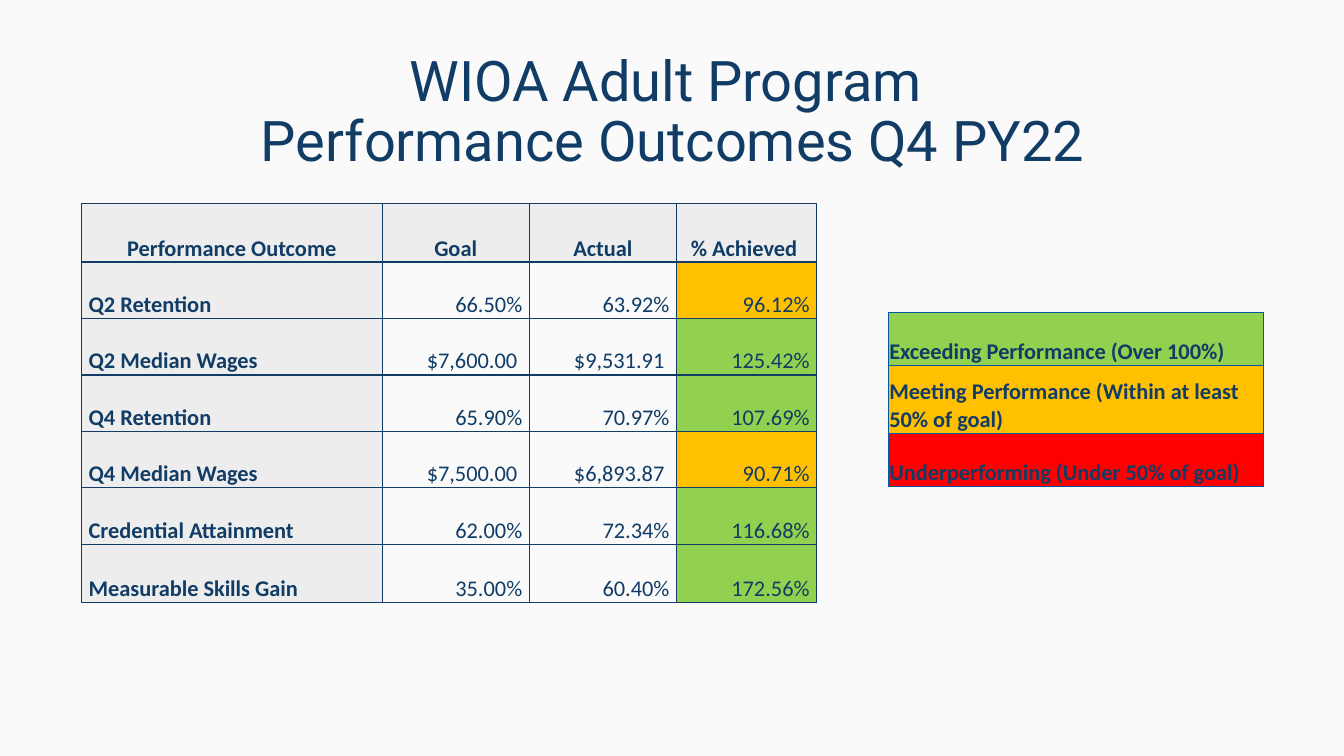
from lxml.etree import SubElement
from pptx import Presentation
from pptx.dml.color import RGBColor
from pptx.enum.text import MSO_ANCHOR, MSO_AUTO_SIZE, PP_ALIGN
from pptx.oxml.ns import qn
from pptx.util import Inches, Pt

NAVY = RGBColor(0x11, 0x3C, 0x66)
BLUE = RGBColor(0x00, 0x58, 0xA3)
PAPER = RGBColor(0xFA, 0xFA, 0xFA)
GREY = RGBColor(0xED, 0xED, 0xED)
GREEN = RGBColor(0x92, 0xD0, 0x50)
AMBER = RGBColor(0xFF, 0xC0, 0x00)
RED = RGBColor(0xFF, 0x00, 0x00)

HEADER = ["Performance Outcome", "Goal", "Actual", "% Achieved "]
OUTCOMES = [
    ["Q2 Retention", "66.50%", "63.92%", "96.12%"],
    ["Q2 Median Wages", "$7,600.00 ", "$9,531.91 ", "125.42%"],
    ["Q4 Retention", "65.90%", "70.97%", "107.69%"],
    ["Q4 Median Wages", "$7,500.00 ", "$6,893.87 ", "90.71%"],
    ["Credential Attainment", "62.00%", "72.34%", "116.68%"],
    ["Measurable Skills Gain", "35.00%", "60.40%", "172.56%"],
]
LEGEND = [
    ("Exceeding Performance (Over 100%)", GREEN),
    ("Meeting Performance (Within at least 50% of goal)", AMBER),
    ("Underperforming (Under 50% of goal)", RED),
]


def rating(achieved):
    """Return the legend colour for a percentage text."""
    value = float(achieved.rstrip("%"))
    return GREEN if value >= 100 else AMBER if value >= 50 else RED


class Deck:
    """Holds the style and the current slide."""

    def __init__(self):
        """Open a title-only slide on the paper background."""
        self.prs = Presentation()
        self.prs.slide_width, self.prs.slide_height = Inches(13.33), Inches(7.5)
        self.slide = self.prs.slides.add_slide(self.prs.slide_layouts[5])
        fill = self.slide.background.fill
        fill.solid()
        fill.fore_color.rgb = PAPER

    def run(self, p, text, size, font, bold=False):
        """Add one styled run."""
        r = p.add_run()
        r.text = text
        r.font.size, r.font.name, r.font.bold = Pt(size), font, bold
        r.font.color.rgb = NAVY

    def title(self, lines, left, top, width, height):
        """Fill the title placeholder, one line per text."""
        sp = self.slide.shapes.title
        sp.left, sp.top = Inches(left), Inches(top)
        sp.width, sp.height = Inches(width), Inches(height)
        tf = sp.text_frame
        tf.word_wrap, tf.auto_size = True, MSO_AUTO_SIZE.NONE
        tf.vertical_anchor = MSO_ANCHOR.MIDDLE
        p = tf.paragraphs[0]
        p.alignment, p.line_spacing = PP_ALIGN.CENTER, 0.9
        for i, line in enumerate(lines):
            if i:
                p.add_line_break()
            self.run(p, line, 40, "Roboto")

    def table(self, left, top, cols, rows):
        """Add an empty table with the given column and row sizes."""
        frame = self.slide.shapes.add_table(
            len(rows), len(cols), Inches(left), Inches(top),
            Inches(sum(cols)), Inches(sum(rows)))
        tbl = frame.table
        tbl.first_row = tbl.horz_banding = False
        for col, width in zip(tbl.columns, cols):
            col.width = Inches(width)
        for row, height in zip(tbl.rows, rows):
            row.height = Inches(height)
        return tbl

    def cell(self, cell, text, fill, border, margins, bold=True, align=PP_ALIGN.LEFT):
        """Write, border and fill one table cell."""
        side, top = margins
        cell.margin_left = cell.margin_right = Inches(side)
        cell.margin_top, cell.margin_bottom = Inches(top), 0
        cell.vertical_anchor = MSO_ANCHOR.BOTTOM
        tc_pr = cell._tc.get_or_add_tcPr()
        for edge in ("a:lnL", "a:lnR", "a:lnT", "a:lnB"):
            ln = SubElement(tc_pr, qn(edge), w=str(Pt(1)))
            solid = SubElement(ln, qn("a:solidFill"))
            SubElement(solid, qn("a:srgbClr"), val=str(border))
        cell.fill.solid()
        cell.fill.fore_color.rgb = fill
        p = cell.text_frame.paragraphs[0]
        p.alignment = align
        self.run(p, text, 16, "Calibri", bold)

    def outcomes(self):
        """Add the table of outcomes, coloured by rating."""
        tbl = self.table(0.81, 2.02, [2.98, 1.46, 1.46, 1.39],
                         [0.58] + [0.56] * 5 + [0.58])
        margins = (0.07, 0)
        for c, text in enumerate(HEADER):
            self.cell(tbl.cell(0, c), text, GREY, NAVY, margins, align=PP_ALIGN.CENTER)
        for r, (name, *figures) in enumerate(OUTCOMES, 1):
            self.cell(tbl.cell(r, 0), name, GREY, NAVY, margins)
            fills = [PAPER, PAPER, rating(figures[-1])]
            for c, (text, fill) in enumerate(zip(figures, fills), 1):
                self.cell(tbl.cell(r, c), text, fill, NAVY, margins, False, PP_ALIGN.RIGHT)

    def legend(self):
        """Add the colour key."""
        tbl = self.table(8.81, 3.1, [3.72], [0.53, 0.67, 0.53])
        for r, (text, fill) in enumerate(LEGEND):
            self.cell(tbl.cell(r, 0), text, fill, BLUE, (0.01, 0.01))


def main():
    """Build and save the slide."""
    deck = Deck()
    deck.title(["WIOA Adult Program ", "Performance Outcomes Q4 PY22"],
               0.92, 0.4, 11.5, 1.45)
    deck.outcomes()
    deck.legend()
    deck.prs.save("out.pptx")


if __name__ == "__main__":
    main()
